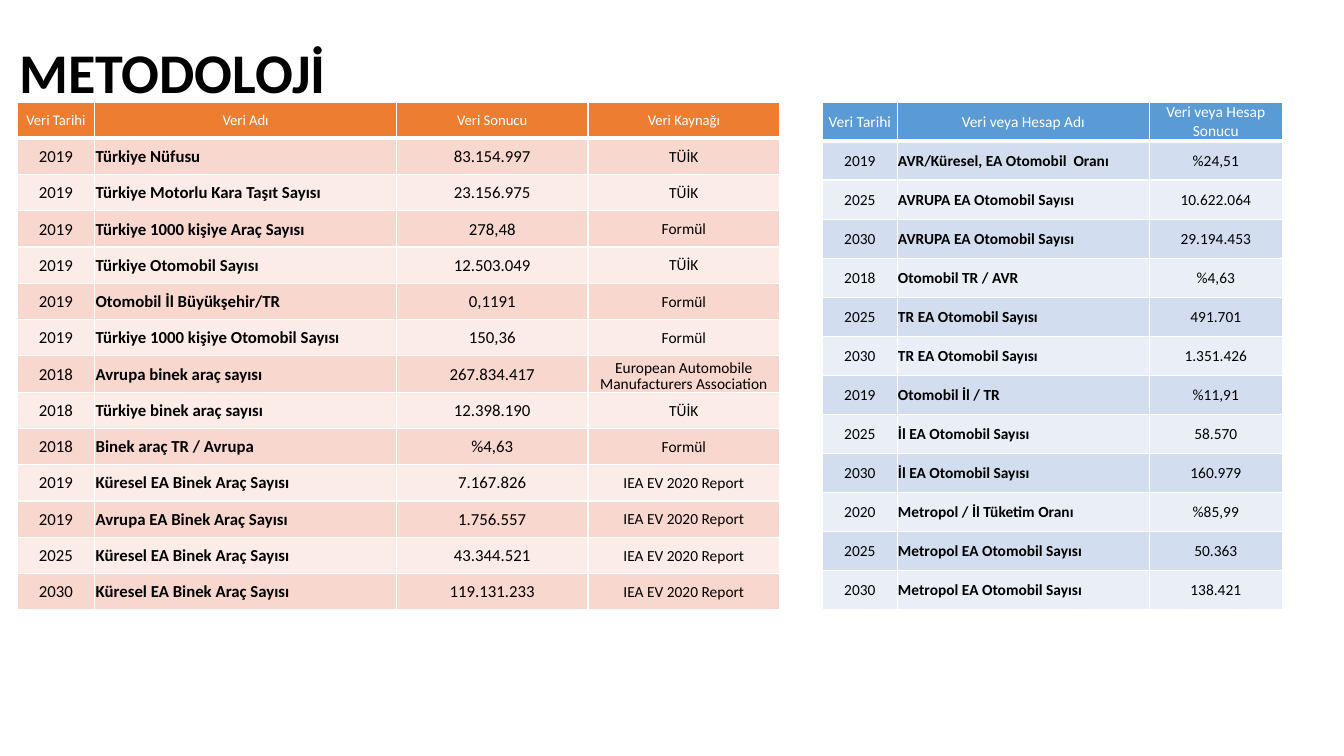
from lxml import etree
from pptx import Presentation
from pptx import util as u
from pptx.dml import color
from pptx.enum import text
from pptx.oxml import ns

Cm, Pt = u.Cm, u.Pt
FONT = "Calibri"
COLORS = {
    "white": "FFFFFF", "black": "000000",
    "orange": "ED7D31", "orange_dark": "F8D7CE", "orange_light": "FCECE8",
    "blue": "5B9BD5", "blue_dark": "D2DEEF", "blue_light": "EAEFF7",
}

SOURCE_DATA = [
    ("Veri Tarihi", "Veri Adı", "Veri Sonucu", "Veri Kaynağı"),
    ("2019", "Türkiye Nüfusu", "83.154.997", "TÜİK"),
    ("2019", "Türkiye Motorlu Kara Taşıt Sayısı", "23.156.975", "TÜİK"),
    ("2019", "Türkiye 1000 kişiye Araç Sayısı", "278,48", "Formül"),
    ("2019", "Türkiye Otomobil Sayısı", "12.503.049", "TÜİK"),
    ("2019", "Otomobil İl Büyükşehir/TR", "0,1191", "Formül"),
    ("2019", "Türkiye 1000 kişiye Otomobil Sayısı", "150,36", "Formül"),
    ("2018", "Avrupa binek araç sayısı", "267.834.417",
     "European Automobile\nManufacturers Association"),
    ("2018", "Türkiye binek araç sayısı", "12.398.190", "TÜİK"),
    ("2018", "Binek araç TR / Avrupa", "%4,63", "Formül"),
    ("2019", "Küresel EA Binek Araç Sayısı", "7.167.826", "IEA EV 2020 Report"),
    ("2019", "Avrupa EA Binek Araç Sayısı", "1.756.557", "IEA EV 2020 Report"),
    ("2025", "Küresel EA Binek Araç Sayısı", "43.344.521", "IEA EV 2020 Report"),
    ("2030", "Küresel EA Binek Araç Sayısı", "119.131.233", "IEA EV 2020 Report"),
]
RESULT_DATA = [
    ("Veri Tarihi", "Veri veya Hesap Adı", "Veri veya Hesap Sonucu"),
    ("2019", "AVR/Küresel, EA Otomobil  Oranı", "%24,51"),
    ("2025", "AVRUPA EA Otomobil Sayısı", "10.622.064"),
    ("2030", "AVRUPA EA Otomobil Sayısı", "29.194.453"),
    ("2018", "Otomobil TR / AVR", "%4,63"),
    ("2025", "TR EA Otomobil Sayısı", "491.701"),
    ("2030", "TR EA Otomobil Sayısı", "1.351.426"),
    ("2019", "Otomobil İl / TR", "%11,91"),
    ("2025", "İl EA Otomobil Sayısı", "58.570"),
    ("2030", "İl EA Otomobil Sayısı", "160.979"),
    ("2020", "Metropol / İl Tüketim Oranı", "%85,99"),
    ("2025", "Metropol EA Otomobil Sayısı", "50.363"),
    ("2030", "Metropol EA Otomobil Sayısı", "138.421"),
]


def rgb(name):
    """Return the named colour."""
    return color.RGBColor.from_string(COLORS[name])


def style_font(p, size, bold, name):
    """Format the font of a paragraph."""
    p.font.name = FONT
    p.font.size = Pt(size)
    p.font.bold = bold
    p.font.color.rgb = rgb(name)


def add_borders(cell, bottom):
    """Draw white cell borders, with the bottom one in the given points."""
    tcPr = cell._tc.get_or_add_tcPr()
    for side, width in (("L", 1), ("R", 1), ("T", 1), ("B", bottom)):
        ln = etree.SubElement(tcPr, ns.qn(f"a:ln{side}"), w=str(Pt(width)))
        fill = etree.SubElement(ln, ns.qn("a:solidFill"))
        etree.SubElement(fill, ns.qn("a:srgbClr"), val=COLORS["white"])


def fill_cell(cell, words, fill, size, bold, name, bottom):
    """Write and format one table cell."""
    stacked = "\n" in words
    add_borders(cell, bottom)
    cell.fill.solid()
    cell.fill.fore_color.rgb = rgb(fill)
    cell.margin_left = cell.margin_right = cell.margin_top = Cm(0.02)
    cell.margin_bottom = 0
    cell.vertical_anchor = text.MSO_ANCHOR.BOTTOM if stacked else text.MSO_ANCHOR.MIDDLE
    cell.text_frame.text = words
    for p in cell.text_frame.paragraphs:
        p.alignment = text.PP_ALIGN.LEFT if bold else text.PP_ALIGN.CENTER
        if stacked:
            p.line_spacing = 0.8
        style_font(p, size, bold, name)


def add_title(s, left, top, width, height):
    """Place the slide title in the given box."""
    sp = s.shapes.title
    sp.left, sp.top, sp.width, sp.height = left, top, width, height
    tf = sp.text_frame
    tf.text = "METODOLOJİ"
    tf.auto_size = text.MSO_AUTO_SIZE.NONE
    tf.vertical_anchor = text.MSO_ANCHOR.MIDDLE
    p = tf.paragraphs[0]
    p.alignment = text.PP_ALIGN.LEFT
    p.line_spacing = 0.9
    style_font(p, 40, True, "black")


def add_data_table(s, left, top, height, widths, rows, hue, header_size, sizes):
    """Place a banded table with equal rows in the given box."""
    frame = s.shapes.add_table(len(rows), len(widths), left, top, sum(widths), height)
    table = frame.table
    table.horz_banding = False
    for column, width in zip(table.columns, widths):
        column.width = width
    for i, row in enumerate(rows):
        table.rows[i].height = height // len(rows)
        band = f"{hue}_dark" if i % 2 else f"{hue}_light"
        for j, words in enumerate(row):
            cell = table.cell(i, j)
            if i == 0:
                fill_cell(cell, words, hue, header_size, False, "white", 3)
            else:
                fill_cell(cell, words, band, sizes[j], j == 1, "black", 1)


def add_methodology(s):
    """Lay out the title and the two tables."""
    top, height = Cm(2.57), Cm(12.8)
    add_title(s, Cm(0.23), Cm(0.05), Cm(29.21), Cm(3.68))
    add_data_table(s, Cm(0.43), top, height, [Cm(w) for w in (1.96, 7.6, 4.83, 4.83)],
                   SOURCE_DATA, "orange", 10.5, (12, 12, 12, 11))
    add_data_table(s, Cm(20.73), top, height, [Cm(w) for w in (1.88, 6.36, 3.34)],
                   RESULT_DATA, "blue", 11, (11, 11, 11))


def main():
    """Build and save the presentation."""
    prs = Presentation()
    prs.slide_width, prs.slide_height = Cm(33.87), Cm(19.05)
    add_methodology(prs.slides.add_slide(prs.slide_layouts[5]))
    prs.save("out.pptx")


if __name__ == "__main__":
    main()
